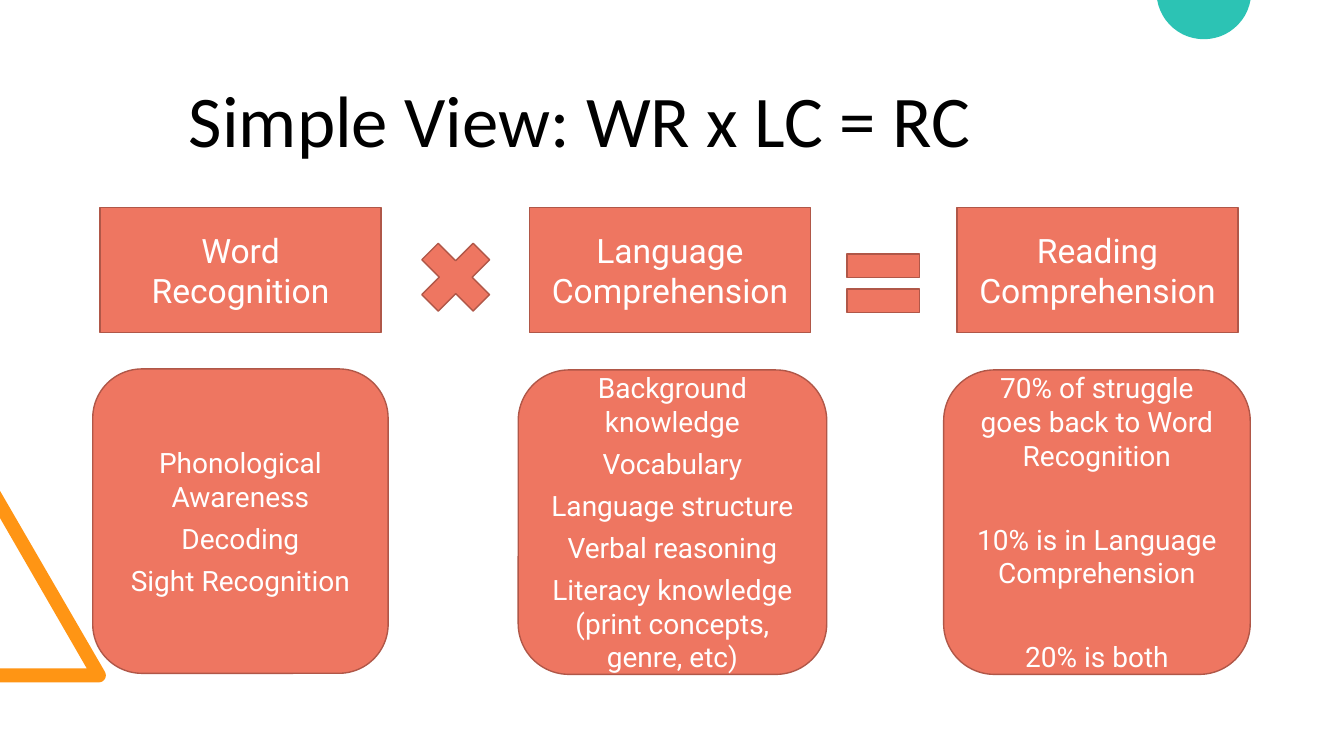
from dataclasses import dataclass
from math import cos, radians, sin

from pptx import Presentation
from pptx.dml.color import RGBColor
from pptx.enum.shapes import MSO_SHAPE
from pptx.enum.text import MSO_ANCHOR, PP_ALIGN
from pptx.util import Inches, Pt


@dataclass(frozen=True)
class Theme:
    coral: RGBColor = RGBColor(0xEE, 0x76, 0x61)
    outline: RGBColor = RGBColor(0xB0, 0x57, 0x48)
    orange: RGBColor = RGBColor(0xFF, 0x95, 0x14)
    teal: RGBColor = RGBColor(0x2C, 0xC3, 0xB4)
    black: RGBColor = RGBColor(0, 0, 0)
    white: RGBColor = RGBColor(0xFF, 0xFF, 0xFF)
    title_font: str = "Calibri"
    body_font: str = "Roboto"
    title_size: int = 52
    factor_size: int = 24
    detail_size: int = 20


THEME = Theme()
FACTOR_TOP, FACTOR_WIDTH, FACTOR_HEIGHT = 2.06, 2.79, 1.24
DETAIL_HEIGHT = 3.02
SPACE_AFTER = 6
WIDE_SPACE_AFTER = 36

# Factor, its left edge, then the details, their box (left, top, width) and spacing
COLUMNS = [
    ("Word Recognition", 0.99,
     ["Phonological Awareness", "Decoding", "Sight Recognition"],
     (0.92, 3.66, 2.93), SPACE_AFTER),
    ("Language Comprehension", 5.25,
     ["Background knowledge", "Vocabulary", "Language structure", "Verbal reasoning",
      "Literacy knowledge (print concepts, genre, etc)"],
     (5.14, 3.67, 3.06), SPACE_AFTER),
    ("Reading Comprehension", 9.49,
     ["70% of struggle goes back to Word Recognition",
      "10% is in Language Comprehension", "20% is both"],
     (9.36, 3.67, 3.04), WIDE_SPACE_AFTER),
]
OPERATORS = [
    (MSO_SHAPE.MATH_MULTIPLY, 4.03, 2.26),
    (MSO_SHAPE.MATH_EQUAL, 8.27, 2.32),
]
OPERATOR_SIZE = 0.98


def arc_points(center_x, center_y, radius, start, end, steps=24):
    """Points along an arc; angles in degrees, clockwise from the right."""
    angles = [radians(start + (end - start) * step / steps) for step in range(steps + 1)]
    return [(center_x + radius * cos(angle), center_y + radius * sin(angle))
            for angle in angles]


def add_outline(slide, points, color):
    corners = [(Inches(x), Inches(y)) for x, y in points]
    builder = slide.shapes.build_freeform(*corners[0])
    builder.add_line_segments(corners[1:], close=True)
    shape = builder.convert_to_shape()
    shape.shadow.inherit = False
    shape.fill.solid()
    shape.fill.fore_color.rgb = color
    shape.line.fill.background()


def add_decorations(slide):
    rounded_corner = arc_points(0.98, 6.7, 0.07, -30, 90, 8)
    add_outline(
        slide,
        [(0, 6.77), (0, 6.63), (0.86, 6.63), (0, 5.14), (0, 4.87)] + rounded_corner,
        THEME.orange)
    add_outline(slide, arc_points(11.94, -0.08, 0.47, 10, 170), THEME.teal)


def add_coral_shape(slide, kind, left, top, width, height):
    shape = slide.shapes.add_shape(
        kind, Inches(left), Inches(top), Inches(width), Inches(height))
    shape.shadow.inherit = False
    shape.fill.solid()
    shape.fill.fore_color.rgb = THEME.coral
    shape.line.color.rgb = THEME.outline
    shape.line.width = Pt(1)
    return shape


def write_centered(shape, lines, font_name, size, color, space_after=0):
    frame = shape.text_frame
    frame.word_wrap = True
    frame.vertical_anchor = MSO_ANCHOR.MIDDLE
    for index, line in enumerate(lines):
        paragraph = frame.paragraphs[0] if index == 0 else frame.add_paragraph()
        paragraph.alignment = PP_ALIGN.CENTER
        is_last = index == len(lines) - 1
        paragraph.space_after = Pt(min(space_after, SPACE_AFTER) if is_last else space_after)
        run = paragraph.add_run()
        run.text = line
        run.font.name = font_name
        run.font.size = Pt(size)
        run.font.color.rgb = color


def add_title(slide, left, top, width, height):
    box = slide.shapes.add_textbox(Inches(left), Inches(top), Inches(width), Inches(height))
    write_centered(box, ["Simple View: WR x LC = RC"],
                   THEME.title_font, THEME.title_size, THEME.black)
    box.text_frame.paragraphs[0].line_spacing = 0.9


def add_equation(slide, top):
    for factor, left, *_ in COLUMNS:
        shape = add_coral_shape(
            slide, MSO_SHAPE.RECTANGLE, left, top, FACTOR_WIDTH, FACTOR_HEIGHT)
        write_centered(shape, [factor], THEME.body_font, THEME.factor_size,
                       THEME.white, SPACE_AFTER)
    for kind, left, operator_top in OPERATORS:
        add_coral_shape(slide, kind, left, operator_top, OPERATOR_SIZE, OPERATOR_SIZE)


def add_details(slide):
    for _, _, details, (left, top, width), space_after in COLUMNS:
        shape = add_coral_shape(
            slide, MSO_SHAPE.ROUNDED_RECTANGLE, left, top, width, DETAIL_HEIGHT)
        write_centered(shape, details, THEME.body_font, THEME.detail_size,
                       THEME.white, space_after)


def main():
    presentation = Presentation()
    presentation.slide_width = Inches(13.33)
    presentation.slide_height = Inches(7.5)
    slide = presentation.slides.add_slide(presentation.slide_layouts[6])
    add_decorations(slide)
    add_title(slide, 0, 0.61, 11.5, 1.24)
    add_equation(slide, FACTOR_TOP)
    add_details(slide)
    presentation.save("out.pptx")


if __name__ == "__main__":
    main()
